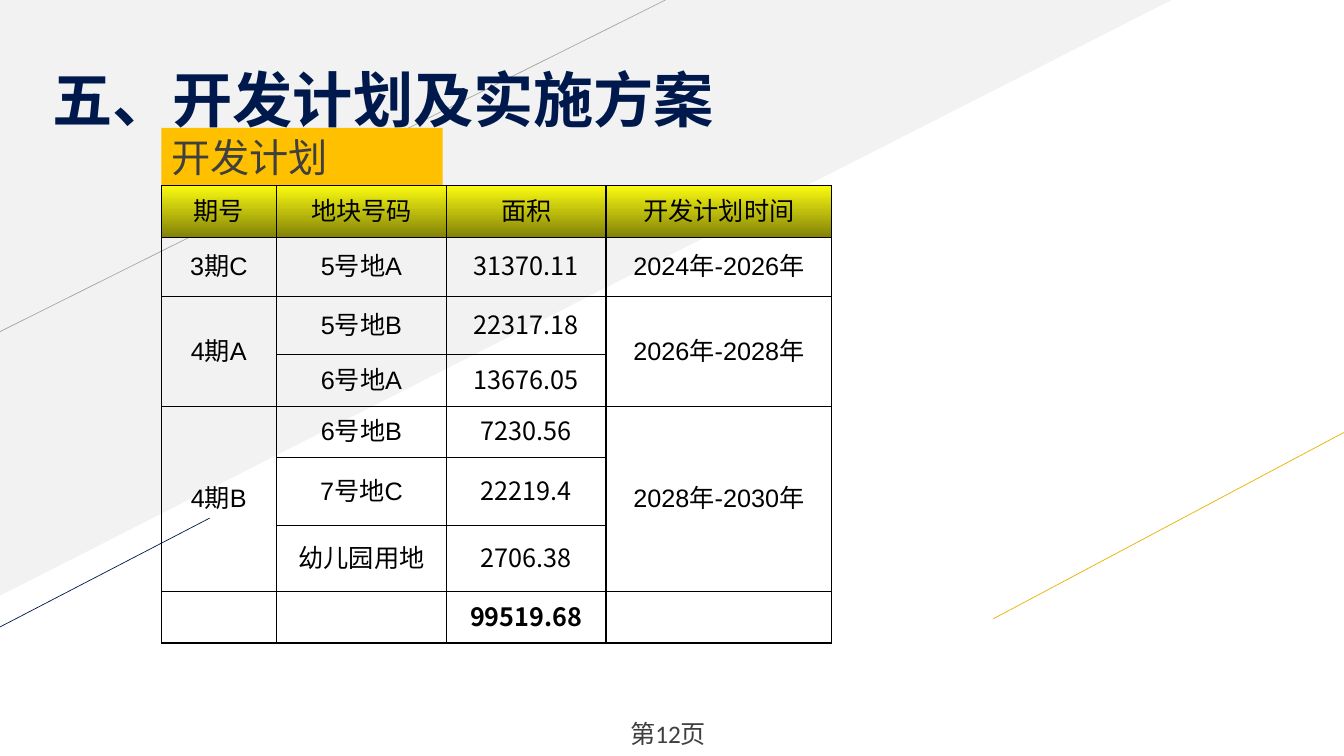
"""Builds the development plan slide with its phase schedule table."""
from dataclasses import dataclass

from lxml import etree
from pptx import Presentation
from pptx import util as u
from pptx.dml.color import RGBColor
from pptx.enum import shapes, text
from pptx.oxml.ns import qn

TITLE = "五、开发计划及实施方案"
LABEL = "开发计划"
PAGE = "第12页"
HEADER = ("期号", "地块号码", "面积", "开发计划时间")
PHASES = (
    ("3期C", "2024年-2026年", (("5号地A", "31370.11"),)),
    ("4期A", "2026年-2028年", (("5号地B", "22317.18"), ("6号地A", "13676.05"))),
    ("4期B", "2028年-2030年", (("6号地B", "7230.56"), ("7号地C", "22219.4"), ("幼儿园用地", "2706.38"))),
)
TOTAL = "99519.68"
COLUMN_WIDTHS = (1.14, 1.69, 1.58, 2.24)
ROW_HEIGHTS = (0.51, 0.59, 0.58, 0.51, 0.51, 0.67, 0.66, 0.51)
PHASE_COL, PLOT_COL, AREA_COL, TIME_COL = range(4)


@dataclass(frozen=True)
class Theme:
    navy: str = "00194C"
    gray: str = "3F3F3F"
    black: str = "000000"
    wedge: str = "F2F2F2"
    amber: str = "FFC000"
    header_top: str = "FBFB11"
    header_bottom: str = "838309"
    cjk: str = "Noto Sans CJK SC"
    table: str = "Arial"
    footer: str = "Calibri"
    title_size: float = 43
    label_size: float = 28
    body_size: float = 18
    thin: float = 0.5
    thick: float = 1


THEME = Theme()
RAYS = (
    ((0, 3.29), (6.6, 0), "A6A6A6"),
    ((9.85, 6.14), (13.33, 4.29), "EAB200"),
    ((-0.02, 6.23), (2.08, 5.14), THEME.navy),
)


def inches(*lengths):
    return [u.Inches(length) for length in lengths]


def write(frame, words, size=THEME.body_size, font=THEME.cjk, color=THEME.black, bold=False,
          align=text.PP_ALIGN.LEFT, spacing=None):
    paragraph = frame.paragraphs[0]
    paragraph.alignment = align
    paragraph.line_spacing = spacing
    run = paragraph.add_run()
    run.text = words
    run.font.size, run.font.bold, run.font.name = u.Pt(size), bold, font
    run.font.color.rgb = RGBColor.from_string(color)
    etree.SubElement(run.font._element, qn("a:ea")).set("typeface", THEME.cjk)


def set_frame(frame, anchor, margins):
    frame.word_wrap = True
    frame.vertical_anchor = anchor
    frame.margin_left, frame.margin_top, frame.margin_right, frame.margin_bottom = inches(*margins)


def add_block(slide, preset, box, color):
    block = slide.shapes.add_shape(preset, *inches(*box))
    block.shadow.inherit = False
    block.fill.solid()
    block.fill.fore_color.rgb = RGBColor.from_string(color)
    block.line.fill.background()
    return block


def add_ray(slide, start, end, color):
    ray = slide.shapes.add_connector(shapes.MSO_CONNECTOR.STRAIGHT, *inches(*start, *end))
    ray.line.color.rgb = RGBColor.from_string(color)
    ray.line.width = u.Pt(THEME.thin)
    etree.SubElement(ray._element.spPr, qn("a:effectLst"))


def set_borders(cell, widths):
    properties = cell._tc.get_or_add_tcPr()
    for index, (side, width) in enumerate(widths.items()):
        border = etree.Element(qn(f"a:ln{side}"), w=str(u.Pt(width)))
        solid = etree.SubElement(border, qn("a:solidFill"))
        etree.SubElement(solid, qn("a:srgbClr")).set("val", THEME.black)
        properties.insert(index, border)


def fill_header(cell):
    cell.fill.gradient()
    cell.fill.gradient_angle = 270
    for stop, color in zip(cell.fill.gradient_stops, (THEME.header_top, THEME.header_bottom)):
        stop.color.rgb = RGBColor.from_string(color)


def add_schedule(slide, left, top):
    last = len(ROW_HEIGHTS) - 1
    size = inches(sum(COLUMN_WIDTHS), sum(ROW_HEIGHTS))
    schedule = slide.shapes.add_table(len(ROW_HEIGHTS), len(COLUMN_WIDTHS), *inches(left, top), *size).table
    schedule.first_row = schedule.horz_banding = False
    for column, width in zip(schedule.columns, COLUMN_WIDTHS):
        column.width = u.Inches(width)
    for row, height in zip(schedule.rows, ROW_HEIGHTS):
        row.height = u.Inches(height)

    entries = {(0, col): words for col, words in enumerate(HEADER)}
    entries[last, AREA_COL] = TOTAL
    first = 1
    for phase, period, plots in PHASES:
        entries[first, PHASE_COL], entries[first, TIME_COL] = phase, period
        end = first + len(plots) - 1
        if end > first:
            for col in (PHASE_COL, TIME_COL):
                schedule.cell(first, col).merge(schedule.cell(end, col))
        for row, (plot, area) in enumerate(plots, first):
            entries[row, PLOT_COL], entries[row, AREA_COL] = plot, area
        first = end + 1

    for row in range(last + 1):
        for col in range(len(COLUMN_WIDTHS)):
            cell = schedule.cell(row, col)
            if row == 0:
                fill_header(cell)
            else:
                cell.fill.background()
            set_borders(cell, {
                "L": THEME.thin,
                "R": THEME.thick if col >= AREA_COL else THEME.thin,
                "T": THEME.thin,
                "B": THEME.thick if row == last else THEME.thin,
            })
            cell.vertical_anchor = text.MSO_ANCHOR.MIDDLE
            cell.margin_left = cell.margin_top = cell.margin_right = u.Inches(0.01)
            cell.margin_bottom = u.Inches(0.05)
            if (row, col) in entries:
                is_area = row > 0 and col == AREA_COL
                write(cell.text_frame, entries[row, col], font=THEME.cjk if is_area else THEME.table,
                      bold=row == last, align=text.PP_ALIGN.CENTER)


def main():
    deck = Presentation()
    deck.slide_width, deck.slide_height = inches(13.33, 7.5)
    slide = deck.slides.add_slide(deck.slide_layouts[6])

    wedge = add_block(slide, shapes.MSO_SHAPE.RIGHT_TRIANGLE, (0, 0, 11.62, 5.91), THEME.wedge)
    wedge._element.spPr.find(qn("a:xfrm")).set("flipV", "1")
    for ray in RAYS:
        add_ray(slide, *ray)

    title = slide.shapes.add_textbox(*inches(0.42, 0.35, 7.1, 0.99)).text_frame
    set_frame(title, text.MSO_ANCHOR.BOTTOM, (0.1, 0.05, 0.1, 0))
    write(title, TITLE, size=THEME.title_size, color=THEME.navy, bold=True, spacing=0.9)

    label = add_block(slide, shapes.MSO_SHAPE.RECTANGLE, (1.6, 1.27, 2.79, 0.57), THEME.amber).text_frame
    set_frame(label, text.MSO_ANCHOR.MIDDLE, (0.1, 0, 0.1, 0))
    write(label, LABEL, size=THEME.label_size, color=THEME.gray)

    add_schedule(slide, 1.6, 1.84)

    footer = slide.shapes.add_textbox(*inches(5.15, 7.08, 2.78, 0.4)).text_frame
    set_frame(footer, text.MSO_ANCHOR.MIDDLE, (1.1, 0.05, 0.1, 0.05))
    write(footer, PAGE, font=THEME.footer, color=THEME.gray)

    deck.save("out.pptx")


if __name__ == "__main__":
    main()
